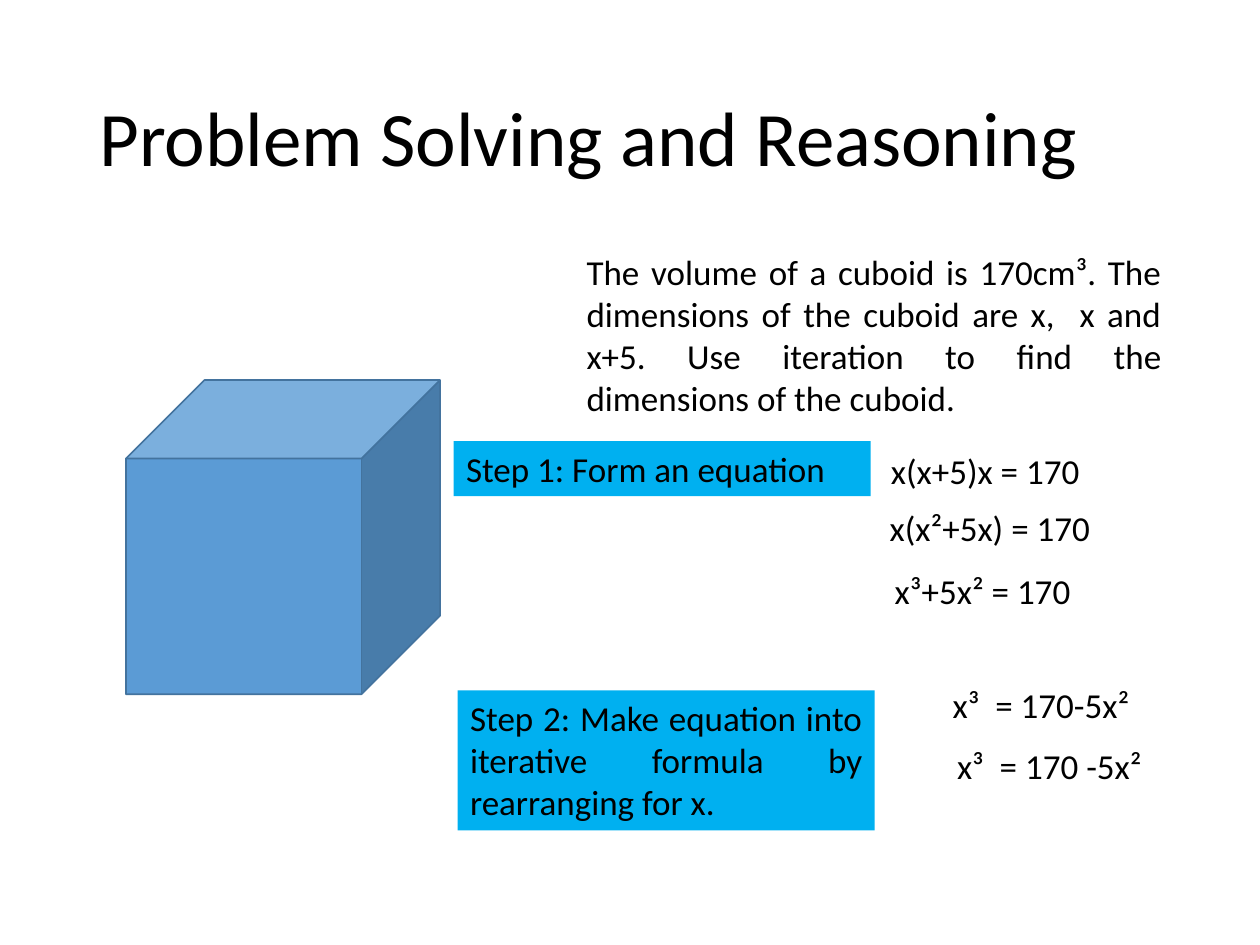
from typing import NamedTuple, Optional

from pptx import Presentation
from pptx.dml.color import RGBColor
from pptx.enum.shapes import MSO_SHAPE as SHAPE
from pptx.enum.text import MSO_ANCHOR as ANCHOR, PP_ALIGN as ALIGN
from pptx.util import Pt

BLACK = RGBColor(0x00, 0x00, 0x00)
CUBE_FILL = RGBColor(0x5B, 0x9B, 0xD5)
CUBE_LINE = RGBColor(0x43, 0x73, 0x9E)
STEP_FILL = RGBColor(0x00, 0xB0, 0xF0)

BODY = {"name": "Calibri", "size": Pt(20)}
TITLE = {"name": "Calibri", "size": Pt(44)}


class Box(NamedTuple):
    text: str
    left: float
    top: float
    width: float
    height: float
    fill: Optional[RGBColor] = None


def add_text(s, box: Box, font: dict = BODY, align=ALIGN.JUSTIFY,
             anchor=ANCHOR.TOP, spacing: float = 1.0):
    """Add a wrapped text box, filled if the box has a colour."""
    sp = s.shapes.add_textbox(*map(Pt, box[1:5]))
    if box.fill is not None:
        sp.fill.solid()
        sp.fill.fore_color.rgb = box.fill
    tf = sp.text_frame
    tf.word_wrap = True
    tf.vertical_anchor = anchor
    p = tf.paragraphs[0]
    p.alignment = align
    p.line_spacing = spacing
    r = p.add_run()
    r.text = box.text
    for name, value in font.items():
        setattr(r.font, name, value)
    r.font.color.rgb = BLACK
    return sp


def add_cube(s, left: float, top: float, size: float):
    sp = s.shapes.add_shape(SHAPE.CUBE, Pt(left), Pt(top), Pt(size), Pt(size))
    sp.shadow.inherit = False
    sp.fill.solid()
    sp.fill.fore_color.rgb = CUBE_FILL
    sp.line.color.rgb = CUBE_LINE
    sp.line.width = Pt(1)
    return sp


HEADING = Box("Problem Solving and Reasoning", 49.7, 28.8, 620.6, 104.4)
QUESTION = Box("The volume of a cuboid is 170cm³. The dimensions of the cuboid "
               "are x,  x and x+5. Use iteration to find the dimensions of the "
               "cuboid.", 328.1, 139.7, 342.7, 104.4)
STEP_1 = Box("Step 1: Form an equation", 259.2, 252, 238.3, 31.5, STEP_FILL)
STEP_2 = Box("Step 2: Make equation into iterative formula by rearranging for x.",
             261.5, 394.5, 238.3, 80, STEP_FILL)

# Working lines: text, left, top
WORKING = [
    ("x(x+5)x = 170", 502, 253.5),
    ("x(x²+5x) = 170", 501.3, 286),
    ("x³+5x² = 170", 504.2, 322),
    ("x³  = 170-5x²", 537.3, 386.8),
    ("x³  = 170 -5x²", 539.8, 422),
]
WORKING_SIZE = (170, 31.5)


def main():
    prs = Presentation()
    prs.slide_width, prs.slide_height = Pt(720), Pt(540)
    s = prs.slides.add_slide(prs.slide_layouts[6])

    # Title
    add_text(s, HEADING, TITLE, ALIGN.LEFT, ANCHOR.MIDDLE, 0.9)

    # Cuboid and question
    add_cube(s, 72, 217.2, 179.5)
    add_text(s, QUESTION)

    # Steps and working
    for step in (STEP_1, STEP_2):
        add_text(s, step)
    for line in WORKING:
        add_text(s, Box(*line, *WORKING_SIZE))

    prs.save("out.pptx")


if __name__ == "__main__":
    main()
